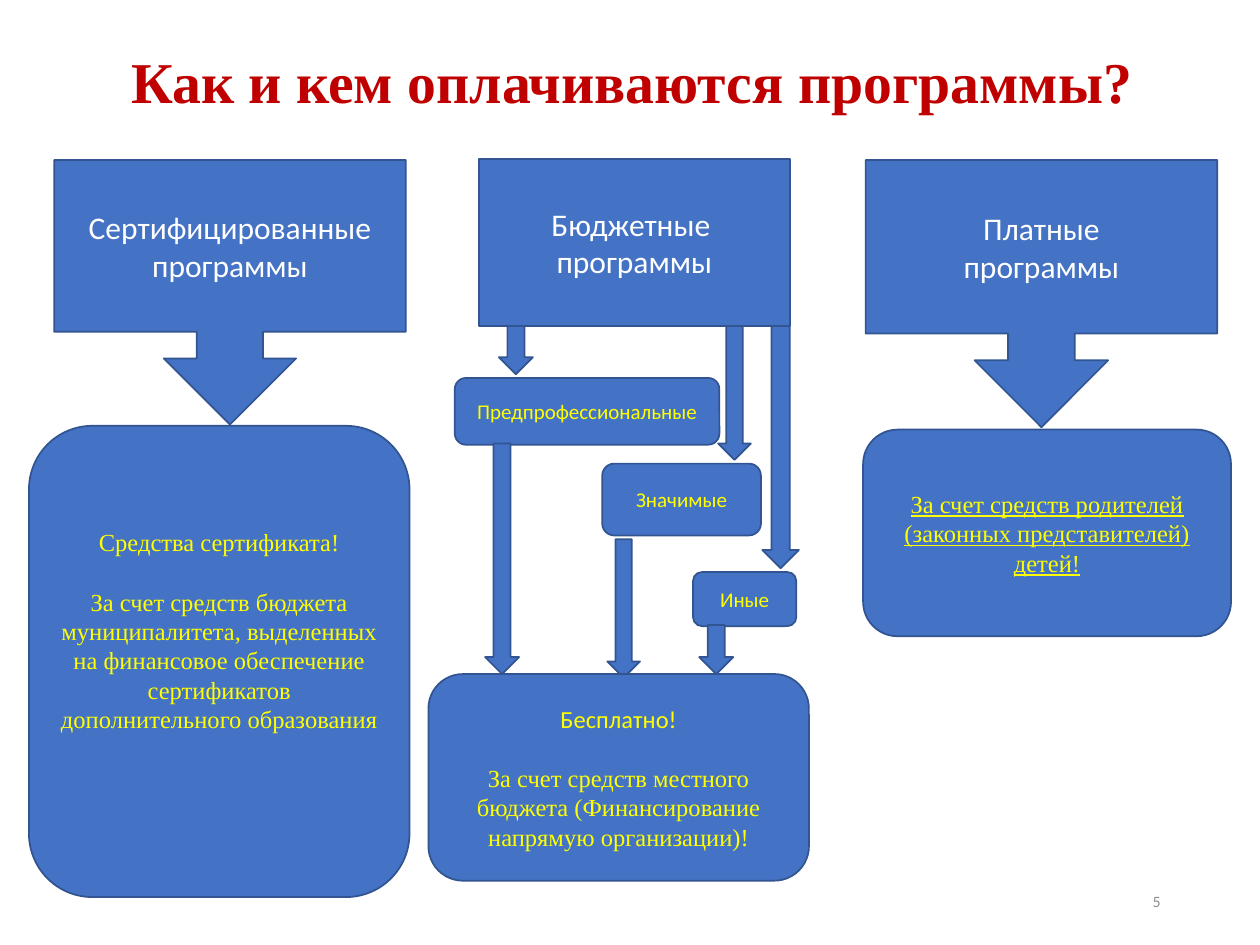
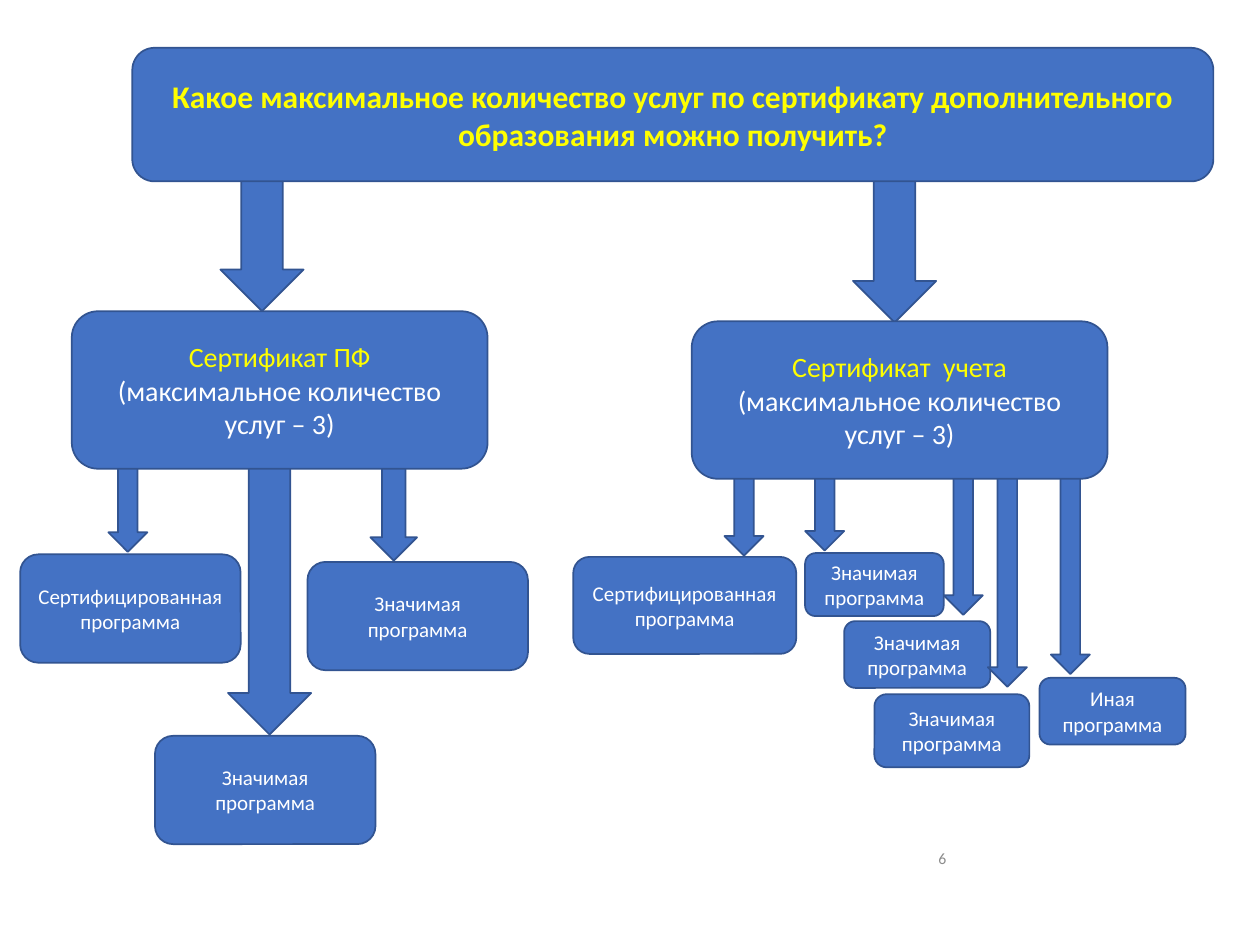
from pptx import Presentation
from pptx.dml.color import RGBColor
from pptx.enum.shapes import MSO_SHAPE as Kind
from pptx.enum.text import MSO_ANCHOR as Anchor, PP_ALIGN as Align
from pptx.util import Inches, Pt

WIDE, HIGH = Inches(10), Inches(7.5)
COL, ROW = WIDE / 100, HIGH / 75
HUES = {
    "box": "4472C4",
    "edge": "325491",
    "title": "C00000",
    "page": "8C8C8C",
    "gold": "FFFF00",
    "white": "FFFFFF",
}
SANS, SERIF = "Calibri", "Times New Roman"


def hue(name):
    return RGBColor.from_string(HUES[name])


def place(x, y, w, h):
    return [round(n) for n in (x * COL, y * ROW, w * COL, h * ROW)]


def line(text, size, color="white", face=SANS, bold=None, under=None, gap=0):
    return dict(text=text, size=size, color=color, face=face,
                bold=bold, under=under, gap=gap)


def write(shape, lines, align=Align.CENTER):
    frame = shape.text_frame
    frame.word_wrap = True
    frame.vertical_anchor = Anchor.MIDDLE
    frame.text = "\n".join(item["text"] for item in lines)
    for para, item in zip(frame.paragraphs, lines):
        para.alignment = align
        para.space_after = Pt(item["gap"])
        font = para.runs[0].font
        font.name = item["face"]
        font.size = Pt(item["size"])
        font.bold = item["bold"]
        font.underline = item["under"]
        font.color.rgb = hue(item["color"])
    return frame


def draw(slide, kind, spot, *lines):
    shape = slide.shapes.add_shape(kind, *place(*spot))
    shape.shadow.inherit = False
    shape.fill.solid()
    shape.fill.fore_color.rgb = hue("box")
    shape.line.color.rgb = hue("edge")
    shape.line.width = Pt(1)
    if lines:
        write(shape, lines)
    return shape


def box(slide, spot, *lines):
    return draw(slide, Kind.ROUNDED_RECTANGLE, spot, *lines)


def arrows(slide, spots):
    for spot in spots:
        draw(slide, Kind.DOWN_ARROW, spot)


def label(slide, spot, item, align):
    shape = slide.shapes.add_textbox(*place(*spot))
    return write(shape, [item], align)


def page(slide, num, spot):
    label(slide, spot, line(str(num), 9, "page"), Align.RIGHT)


def title(slide, text):
    frame = label(slide, (7.2, 2.9, 85.9, 7.6),
                  line(text, 33, "title", SERIF, bold=True), Align.CENTER)
    frame.paragraphs[0].line_spacing = 0.9


def payment(slide):
    title(slide, "Как и кем оплачиваются программы?")
    page(slide, 5, (70.6, 69.5, 22.5, 4))

    draw(slide, Kind.DOWN_ARROW_CALLOUT, (4.3, 12.7, 27.9, 21),
         line("Сертифицированные программы", 18))
    funds = box(
        slide, (2.3, 33.8, 30.2, 37.4),
        line("Средства сертификата!", 14, "gold", SERIF, gap=17),
        line("За счет средств бюджета муниципалитета, выделенных на "
             "финансовое обеспечение сертификатов дополнительного образования",
             14, "gold", SERIF))
    funds.text_frame.margin_bottom = round(5.4 * ROW)

    draw(slide, Kind.DOWN_ARROW_CALLOUT, (68.7, 12.7, 27.9, 21.2),
         line("Платные", 18), line("программы", 18))
    box(slide, (68.5, 34.1, 29.2, 16.4),
        line("За счет средств родителей (законных представителей) детей!",
             14, "gold", SERIF, under=True))

    for text, spot in (
        ("Предпрофессиональные", (36.1, 30, 21, 5.3)),
        ("Значимые", (47.8, 36.8, 12.6, 5.7)),
        ("Иные", (55, 45.4, 8.2, 4.3)),
    ):
        box(slide, spot, line(text, 12, "gold"))
    arrows(slide, [(39.6, 25.8, 2.7, 3.9), (57, 25.5, 2.6, 11),
                   (60.5, 25.7, 2.9, 19.4)])
    draw(slide, Kind.RECTANGLE, (38, 12.6, 24.7, 13.3),
         line("Бюджетные  программы", 18))
    arrows(slide, [(38.5, 35.2, 2.7, 18.3), (48.2, 42.8, 2.6, 11),
                   (55.5, 49.6, 2.7, 3.9)])
    box(slide, (34, 53.5, 30.2, 16.4),
        line("Бесплатно!", 14, "gold", gap=17),
        line("За счет средств местного бюджета (Финансирование напрямую "
             "организации)!", 14, "gold", SERIF))


def limits(slide):
    page(slide, 6, (70.5, 66.1, 5.6, 4))

    for kind, spot in (
        ("Сертифицированная", (1.6, 44, 17.5, 8.6)),
        ("Значимая", (12.3, 58.4, 17.5, 8.6)),
        ("Значимая", (24.4, 44.6, 17.5, 8.6)),
        ("Сертифицированная", (45.5, 44.2, 17.7, 7.7)),
        ("Значимая", (69.4, 55.1, 12.3, 5.8)),
        ("Значимая", (63.9, 43.9, 11, 5)),
        ("Значимая", (67, 49.3, 11.6, 5.3)),
        ("Иная", (82.5, 53.8, 11.6, 5.3)),
    ):
        box(slide, spot, line(f"{kind} программа", 12))

    arrows(slide, [(17.5, 13.7, 6.6, 11), (67.7, 14, 6.6, 11.6),
                   (8.6, 36, 3.1, 7.8), (18.1, 35.9, 6.6, 22.4),
                   (29.4, 36.5, 3.7, 8)])
    arrows(slide, [(x, y, 3.1, h) for x, y, h in (
        (57.5, 37.7, 6.4), (63.9, 36.6, 7.1), (78.4, 37.7, 16.8),
        (74.9, 37.7, 11.1), (83.4, 36.7, 16.8))])

    for name, x, y in (("Сертификат ПФ", 5.7, 24.7),
                       ("Сертификат  учета", 54.9, 25.5)):
        box(slide, (x, y, 33, 12.5), line(name, 16, "gold"),
            line("(максимальное количество услуг – 3)", 16))
    box(slide, (10.5, 3.8, 85.8, 10.6),
        line("Какое максимальное количество услуг по сертификату "
             "дополнительного образования можно получить?",
             18, "gold", bold=True))


def main():
    deck = Presentation()
    deck.slide_width, deck.slide_height = WIDE, HIGH
    for build in (payment, limits):
        build(deck.slides.add_slide(deck.slide_layouts[6]))
    deck.save("out.pptx")


if __name__ == "__main__":
    main()
